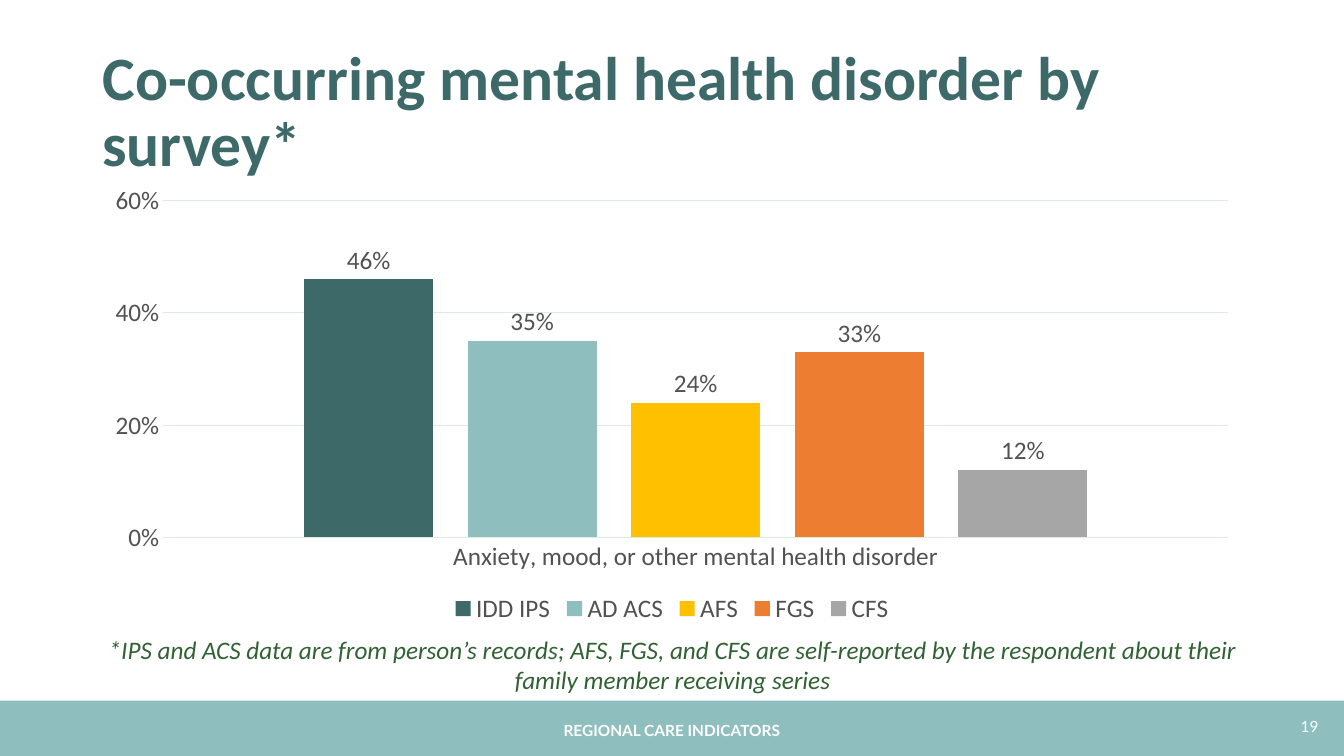
from dataclasses import dataclass

import pptx
import pptx.chart.data
import pptx.dml.color
import pptx.enum.chart
import pptx.enum.shapes
import pptx.enum.text
import pptx.util

Pt = pptx.util.Pt
ALIGN = pptx.enum.text.PP_ALIGN
ANCHOR = pptx.enum.text.MSO_ANCHOR


@dataclass(frozen=True)
class Theme:
    teal: str = "3D6969"
    band: str = "8EBEBE"
    note: str = "316234"
    grey: str = "525252"
    grid: str = "DBEDDC"
    white: str = "FFFFFF"
    body_font: str = "Calibri"
    footer_font: str = "Lato"
    title_size: int = 44
    body_size: int = 18
    footer_size: int = 11


THEME = Theme()

CATEGORY = "Anxiety, mood, or other mental health disorder"
SURVEYS = [
    ("IDD IPS", 0.46, THEME.teal),
    ("AD ACS", 0.35, THEME.band),
    ("AFS", 0.24, "FFC000"),
    ("FGS", 0.33, "ED7D31"),
    ("CFS", 0.12, "A6A6A6"),
]


def rgb(color):
    return pptx.dml.color.RGBColor.from_string(color)


def format_font(font, size=THEME.body_size, color=THEME.grey,
                name=THEME.body_font, bold=False, italic=False):
    font.size, font.name = Pt(size), name
    font.bold, font.italic = bold, italic
    font.color.rgb = rgb(color)


def place(sp, left, top, width, height):
    sp.left, sp.top, sp.width, sp.height = map(Pt, (left, top, width, height))


def write(sp, text, align=ALIGN.LEFT, anchor=ANCHOR.TOP, spacing=None, **font):
    tf = sp.text_frame
    tf.word_wrap = True
    tf.auto_size = pptx.enum.text.MSO_AUTO_SIZE.NONE
    tf.vertical_anchor = anchor
    p = tf.paragraphs[0]
    p.alignment = align
    p.line_spacing = spacing
    r = p.add_run()
    r.text = text
    format_font(r.font, **font)


def add_text(s, box, text, **style):
    write(s.shapes.add_textbox(*map(Pt, box)), text, **style)


def add_band(s, box, color):
    sp = s.shapes.add_shape(pptx.enum.shapes.MSO_SHAPE.RECTANGLE, *map(Pt, box))
    sp.shadow.inherit = False
    sp.fill.solid()
    sp.fill.fore_color.rgb = rgb(color)
    sp.line.fill.background()


def format_line(line):
    line.color.rgb = rgb(THEME.grid)
    line.width = Pt(0.75)


def format_axes(chart):
    no_tick = pptx.enum.chart.XL_TICK_MARK.NONE
    for axis in (chart.category_axis, chart.value_axis):
        axis.major_tick_mark = axis.minor_tick_mark = no_tick
        format_font(axis.tick_labels.font)
    format_line(chart.category_axis.format.line)
    values = chart.value_axis
    values.minimum_scale, values.maximum_scale = 0, 0.6
    values.major_unit = 0.2
    values.format.line.fill.background()
    format_line(values.major_gridlines.format.line)
    values.tick_labels.number_format = "0%"
    values.tick_labels.number_format_is_linked = False


def format_series(series, color):
    series.format.fill.solid()
    series.format.fill.fore_color.rgb = rgb(color)
    series.invert_if_negative = False
    labels = series.data_labels
    labels.show_value = True
    labels.position = pptx.enum.chart.XL_LABEL_POSITION.OUTSIDE_END
    labels.number_format = "0%"
    labels.number_format_is_linked = False
    format_font(labels.font)


def add_survey_chart(s, box):
    data = pptx.chart.data.CategoryChartData(number_format="0%")
    data.categories = [CATEGORY]
    for name, share, _ in SURVEYS:
        data.add_series(name, [share])
    kind = pptx.enum.chart.XL_CHART_TYPE.COLUMN_CLUSTERED
    chart = s.shapes.add_chart(kind, *map(Pt, box), data).chart
    format_font(chart.font)
    chart.has_title = False
    chart.has_legend = True
    chart.legend.position = pptx.enum.chart.XL_LEGEND_POSITION.BOTTOM
    chart.legend.include_in_layout = False
    format_font(chart.legend.font)
    plot = chart.plots[0]
    plot.gap_width, plot.overlap = 219, -27
    plot.vary_by_categories = False
    for series, (_, _, color) in zip(plot.series, SURVEYS):
        format_series(series, color)
    format_axes(chart)


def main():
    prs = pptx.Presentation()
    prs.slide_width, prs.slide_height = Pt(960), Pt(540)
    s = prs.slides.add_slide(prs.slide_layouts[5])

    title = s.shapes.title
    place(title, 66, 28.8, 828, 104.4)
    write(title, "Co-occurring mental health disorder by survey*",
          anchor=ANCHOR.MIDDLE, spacing=0.9, size=THEME.title_size,
          color=THEME.teal, bold=True)

    add_band(s, (0, 500.4, 960, 39.6), THEME.band)
    add_survey_chart(s, (66, 126, 828, 323.3))
    add_text(s, (54, 449.3, 853, 51),
             "*IPS and ACS data are from person’s records; AFS, FGS, and CFS are "
             "self-reported by the respondent about their family member "
             "receiving series",
             align=ALIGN.CENTER, color=THEME.note, italic=True)

    footer = dict(size=THEME.footer_size, color=THEME.white,
                  name=THEME.footer_font)
    add_text(s, (733, 509, 216, 28.8), "19", align=ALIGN.RIGHT, **footer)
    add_text(s, (318, 511.2, 324, 23), "REGIONAL CARE INDICATORS",
             align=ALIGN.CENTER, bold=True, **footer)

    prs.save("out.pptx")


if __name__ == "__main__":
    main()
